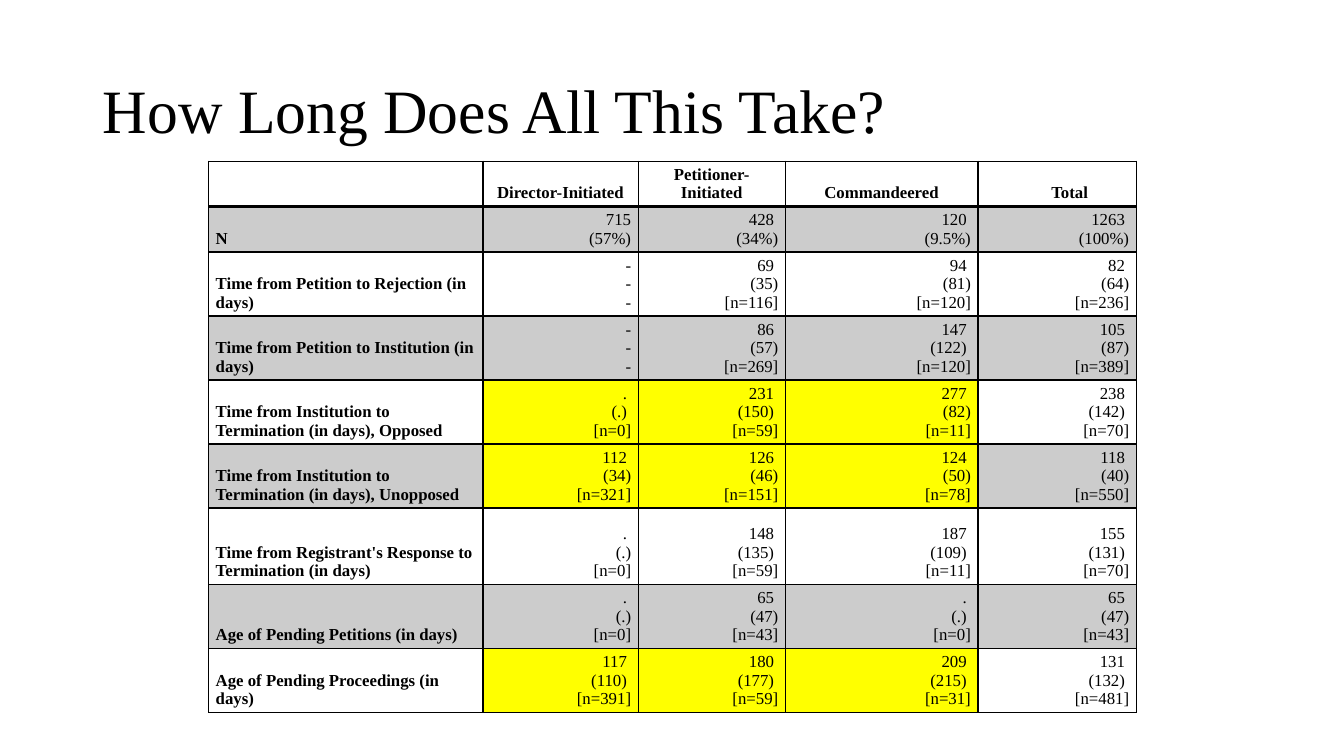
from lxml.etree import SubElement
from pptx import Presentation
from pptx.dml.color import RGBColor
from pptx.enum.text import MSO_ANCHOR, MSO_AUTO_SIZE, PP_ALIGN
from pptx.oxml.ns import qn
from pptx.util import Inches, Pt

FONT = "Times New Roman"
BLACK, YELLOW = "000000", "FFFF00"
TITLE_BOX = (0.92, 0.4, 11.5, 1.45)
TABLE_BOX = (2.07, 1.6, 9.2, 5.14)
COLUMN_WIDTHS = (2.72, 1.54, 1.46, 1.91, 1.57)
ROW_HEIGHTS = (0.42, 0.42, 0.59, 0.59, 0.59, 0.59, 0.76, 0.59, 0.59)
HIGHLIGHTED_ROWS = (4, 5, 8)
FIRST_LINE_INDENT = 0.25
ROWS = (
    ("", "Director-Initiated", "Petitioner-Initiated", "Commandeered", "Total"),
    ("N", "715| (57%)", "428 |(34%)", "120 |(9.5%)", "1263 |(100%)"),
    ("Time from Petition to Rejection (in days)",
     "-|-|-", "69 |(35)|[n=116]", "94 |(81)|[n=120]", "82 |(64)|[n=236]"),
    ("Time from Petition to Institution (in days)",
     "-|-|-", "86 |(57)|[n=269]", "147 |(122) |[n=120]", "105 |(87)|[n=389]"),
    ("Time from Institution to Termination (in days), Opposed",
     ". |(.) |[n=0]", "231 |(150) |[n=59]", "277 |(82)|[n=11]", "238 |(142) |[n=70]"),
    ("Time from Institution to Termination (in days), Unopposed",
     "112 |(34)|[n=321]", "126 |(46)|[n=151]", "124 |(50)|[n=78]", "118 |(40)|[n=550]"),
    ("Time from Registrant's Response to Termination (in days)",
     ". |(.)|[n=0]", "148 |(135) |[n=59]", "187 |(109) |[n=11]", "155 |(131) |[n=70]"),
    ("Age of Pending Petitions (in days)",
     ". |(.)|[n=0]", "65 |(47)|[n=43]", ". |(.) |[n=0]", "65 |(47)|[n=43]"),
    ("Age of Pending Proceedings (in days)",
     "117 |(110) |[n=391]", "180 |(177) |[n=59]", "209 |(215) |[n=31]", "131 |(132) |[n=481]"),
)


def set_all(target, values):
    """Set every attribute in a dict on one object."""
    for name, value in values.items():
        setattr(target, name, value)


def color(value):
    """Turn a hex string into a colour."""
    return RGBColor.from_string(value)


def write(para, text, size, bold=False):
    """Add one black span of text to a paragraph."""
    span = para.add_run()
    span.text = text
    set_all(span.font, {"name": FONT, "size": Pt(size), "bold": bold})
    span.font.color.rgb = color(BLACK)


def add_title(page, text):
    """Place and format the title."""
    title = page.shapes.title
    left, top, width, height = map(Inches, TITLE_BOX)
    set_all(title, {"left": left, "top": top, "width": width, "height": height})
    set_all(title.text_frame, {"vertical_anchor": MSO_ANCHOR.MIDDLE,
                               "auto_size": MSO_AUTO_SIZE.NONE, "word_wrap": True})
    para = title.text_frame.paragraphs[0]
    set_all(para, {"alignment": PP_ALIGN.LEFT, "line_spacing": 0.9})
    write(para, text, 44)


def set_borders(cell, widths):
    """Draw black borders, given a width in points for each side."""
    properties = cell._tc.get_or_add_tcPr()
    for side, width in widths.items():
        line = SubElement(properties, qn(f"a:ln{side}"), w=str(Pt(width)))
        fill = SubElement(line, qn("a:solidFill"))
        SubElement(fill, qn("a:srgbClr"), val=BLACK)


def fill_cell(cell, row, column):
    """Highlight key figures, shade odd rows and leave the rest clear."""
    highlighted = row in HIGHLIGHTED_ROWS and 1 <= column <= 3
    if not highlighted and row % 2 == 0:
        cell.fill.background()
        return
    cell.fill.solid()
    cell.fill.fore_color.rgb = color(YELLOW if highlighted else BLACK)
    if not highlighted:
        shade = cell._tc.tcPr.find(qn("a:solidFill")).find(qn("a:srgbClr"))
        SubElement(shade, qn("a:alpha"), val="20000")


def write_cell(cell, text, row, column):
    """Write the lines of one cell, aligned by its place in the table."""
    set_all(cell, {"vertical_anchor": MSO_ANCHOR.BOTTOM,
                   "margin_left": Inches(0.07), "margin_right": Inches(0.07),
                   "margin_top": Inches(0.04), "margin_bottom": Inches(0.04)})
    is_value = row > 0 and column > 0
    alignment = PP_ALIGN.RIGHT if is_value else PP_ALIGN.LEFT if row else PP_ALIGN.CENTER
    frame = cell.text_frame
    for index, line in enumerate(text.split("|") if text else ()):
        para = frame.add_paragraph() if index else frame.paragraphs[0]
        para.alignment = alignment
        if is_value or text == "Total":
            indent = {"marL": "0", "indent": str(Inches(FIRST_LINE_INDENT))}
            para._p.get_or_add_pPr().attrib.update(indent)
        write(para, line, 12, bold=not is_value)


def add_duration_table(page):
    """Add the table of durations."""
    box = map(Inches, TABLE_BOX)
    table = page.shapes.add_table(len(ROWS), len(COLUMN_WIDTHS), *box).table
    set_all(table, {"first_row": False, "horz_banding": False})
    for column, width in zip(table.columns, COLUMN_WIDTHS):
        column.width = Inches(width)
    for row, height in zip(table.rows, ROW_HEIGHTS):
        row.height = Inches(height)
    for row, texts in enumerate(ROWS):
        borders = {"L": 1, "R": 1, "T": 2 if row == 1 else 1, "B": 2 if row == 0 else 1}
        for column, text in enumerate(texts):
            cell = table.cell(row, column)
            write_cell(cell, text, row, column)
            set_borders(cell, borders)
            fill_cell(cell, row, column)


def main():
    """Build and save the slide."""
    deck = Presentation()
    set_all(deck, {"slide_width": Inches(13.33), "slide_height": Inches(7.5)})
    page = deck.slides.add_slide(deck.slide_layouts[5])
    add_title(page, "How Long Does All This Take?")
    add_duration_table(page)
    deck.save("out.pptx")


if __name__ == "__main__":
    main()
